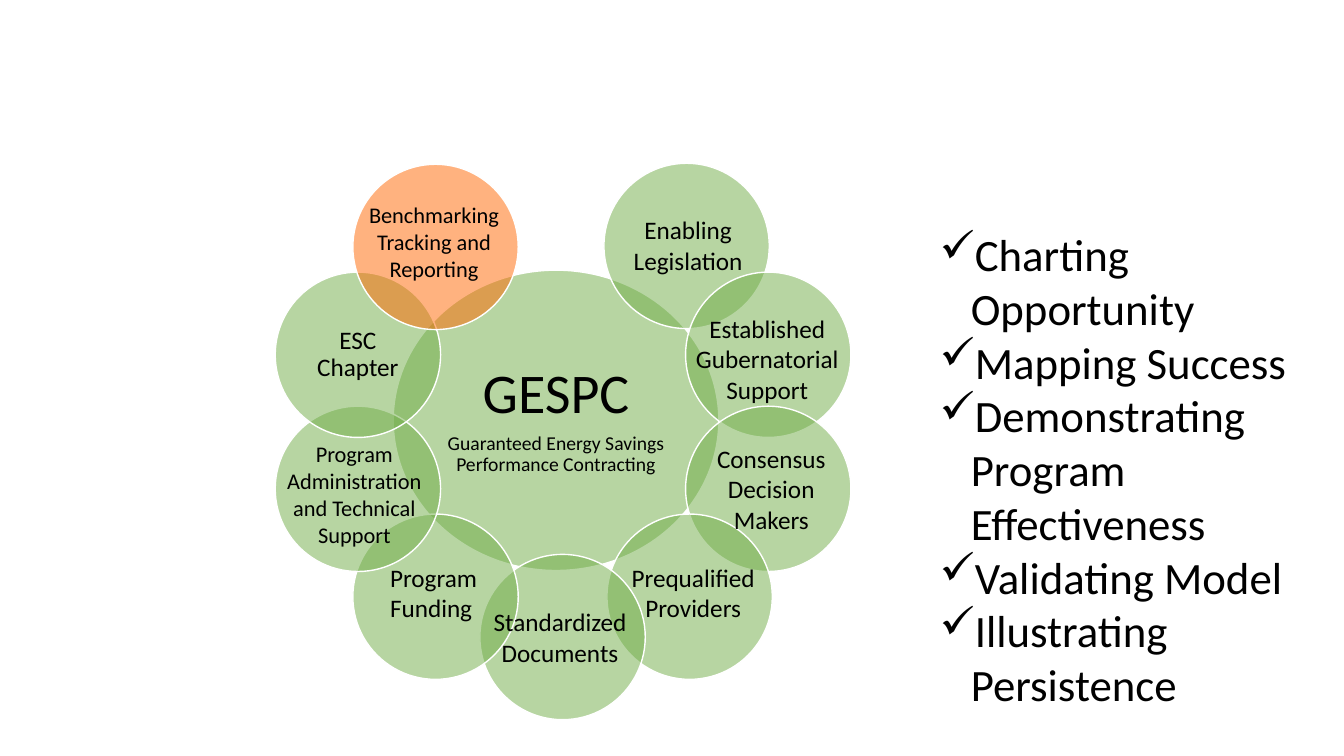
from lxml import etree
from pptx import Presentation
from pptx.dml.color import RGBColor
from pptx.enum.shapes import MSO_SHAPE
from pptx.enum.text import MSO_ANCHOR, MSO_AUTO_SIZE, PP_ALIGN
from pptx.oxml.ns import qn
from pptx.util import Inches, Pt

OVAL = MSO_SHAPE.OVAL
MIDDLE = MSO_ANCHOR.MIDDLE
GROW = MSO_AUTO_SIZE.SHAPE_TO_FIT_TEXT
LEFT, CENTER = PP_ALIGN.LEFT, PP_ALIGN.CENTER

GREEN = RGBColor(0x70, 0xAD, 0x47)
ORANGE = RGBColor(0xFF, 0x66, 0x00)
WHITE = RGBColor(0xFF, 0xFF, 0xFF)
BLACK = RGBColor(0, 0, 0)

FONT = "Calibri"
PETAL_SIZE = 1.64
PETALS = [
    (5.99, 1.62, GREEN),
    (6.8, 2.7, GREEN),
    (6.8, 4.03, GREEN),
    (6.02, 5.1, GREEN),
    (4.76, 5.5, GREEN),
    (3.5, 5.1, GREEN),
    (2.73, 4.03, GREEN),
    (2.73, 2.7, GREEN),
    (3.5, 1.63, ORANGE),
]
CHAPTER_PETAL = 7
LABELS = [
    ("Established Gubernatorial Support", 6.74, 3.06, 1.74, 1.01, 18, CENTER),
    ("Consensus Decision Makers", 6.97, 4.35, 1.36, 1.01, 18, CENTER),
    ("Prequalified Providers", 6.07, 5.53, 1.61, 0.71, 18, CENTER),
    ("Standardized Documents", 4.77, 5.97, 1.57, 0.71, 18, CENTER),
    ("Program Funding", 3.77, 5.53, 1.09, 0.71, 18, LEFT),
    ("Benchmarking Tracking and Reporting", 3.54, 1.95, 1.53, 1.04, 16, CENTER),
    ("Program Administration and Technical Support", 2.73, 4.32, 1.57, 1.18, 16, CENTER),
    ("Enabling Legislation", 6.07, 2.08, 1.51, 0.71, 18, CENTER),
]
GOALS = [
    "Charting Opportunity",
    "Mapping Success",
    "Demonstrating Program Effectiveness",
    "Validating Model",
    "Illustrating Persistence",
]


def style_paragraph(paragraph, size, alignment):
    paragraph.alignment = alignment
    paragraph.font.name = FONT
    paragraph.font.size = Pt(size)
    paragraph.font.color.rgb = BLACK


def add_circle(slide, left, top, width, height, color):
    circle = slide.shapes.add_shape(
        OVAL, Inches(left), Inches(top), Inches(width), Inches(height))
    circle.shadow.inherit = False
    circle.fill.solid()
    circle.fill.fore_color.rgb = color
    color_element = circle.fill._xPr.find(qn("a:solidFill"))[0]
    etree.SubElement(color_element, qn("a:alpha"), val="50000")
    circle.line.color.rgb = WHITE
    circle.line.width = Pt(1)
    return circle


def write_in_circle(circle, lines, inset):
    frame = circle.text_frame
    frame.word_wrap = True
    frame.vertical_anchor = MIDDLE
    frame.margin_left = frame.margin_right = Inches(inset)
    frame.margin_top = frame.margin_bottom = Inches(inset)
    for index, (text, size) in enumerate(lines):
        paragraph = frame.add_paragraph() if index else frame.paragraphs[0]
        paragraph.text = text
        paragraph.line_spacing = 0.9
        paragraph.space_after = Pt(6)
        style_paragraph(paragraph, size, CENTER)


def add_text_box(slide, left, top, width, height):
    box = slide.shapes.add_textbox(
        Inches(left), Inches(top), Inches(width), Inches(height))
    box.text_frame.word_wrap = True
    box.text_frame.auto_size = GROW
    return box.text_frame


def add_label(slide, text, left, top, width, height, size, alignment):
    paragraph = add_text_box(slide, left, top, width, height).paragraphs[0]
    paragraph.text = text
    style_paragraph(paragraph, size, alignment)


def add_checklist(slide, items):
    frame = add_text_box(slide, 9.22, 2.2, 3.81, 4.95)
    for index, item in enumerate(items):
        paragraph = frame.add_paragraph() if index else frame.paragraphs[0]
        paragraph.text = item
        properties = paragraph._p.get_or_add_pPr()
        properties.set("marL", str(Inches(0.31)))
        properties.set("indent", str(Inches(-0.31)))
        etree.SubElement(properties, qn("a:buChar"), char="✓")
        style_paragraph(paragraph, 32, LEFT)


def main():
    presentation = Presentation()
    presentation.slide_width = Inches(13.33)
    presentation.slide_height = Inches(7.5)
    slide = presentation.slides.add_slide(presentation.slide_layouts[6])

    add_checklist(slide, GOALS)
    hub = add_circle(slide, 3.9, 2.68, 3.23, 2.98, GREEN)
    write_in_circle(hub, [
        ("GESPC", 40),
        ("Guaranteed Energy Savings Performance Contracting", 14),
    ], 0.05)
    petals = [add_circle(slide, left, top, PETAL_SIZE, PETAL_SIZE, color)
              for left, top, color in PETALS]
    write_in_circle(petals[CHAPTER_PETAL], [("ESC Chapter", 18)], 0.02)
    for label in LABELS:
        add_label(slide, *label)

    presentation.save("out.pptx")


if __name__ == "__main__":
    main()
